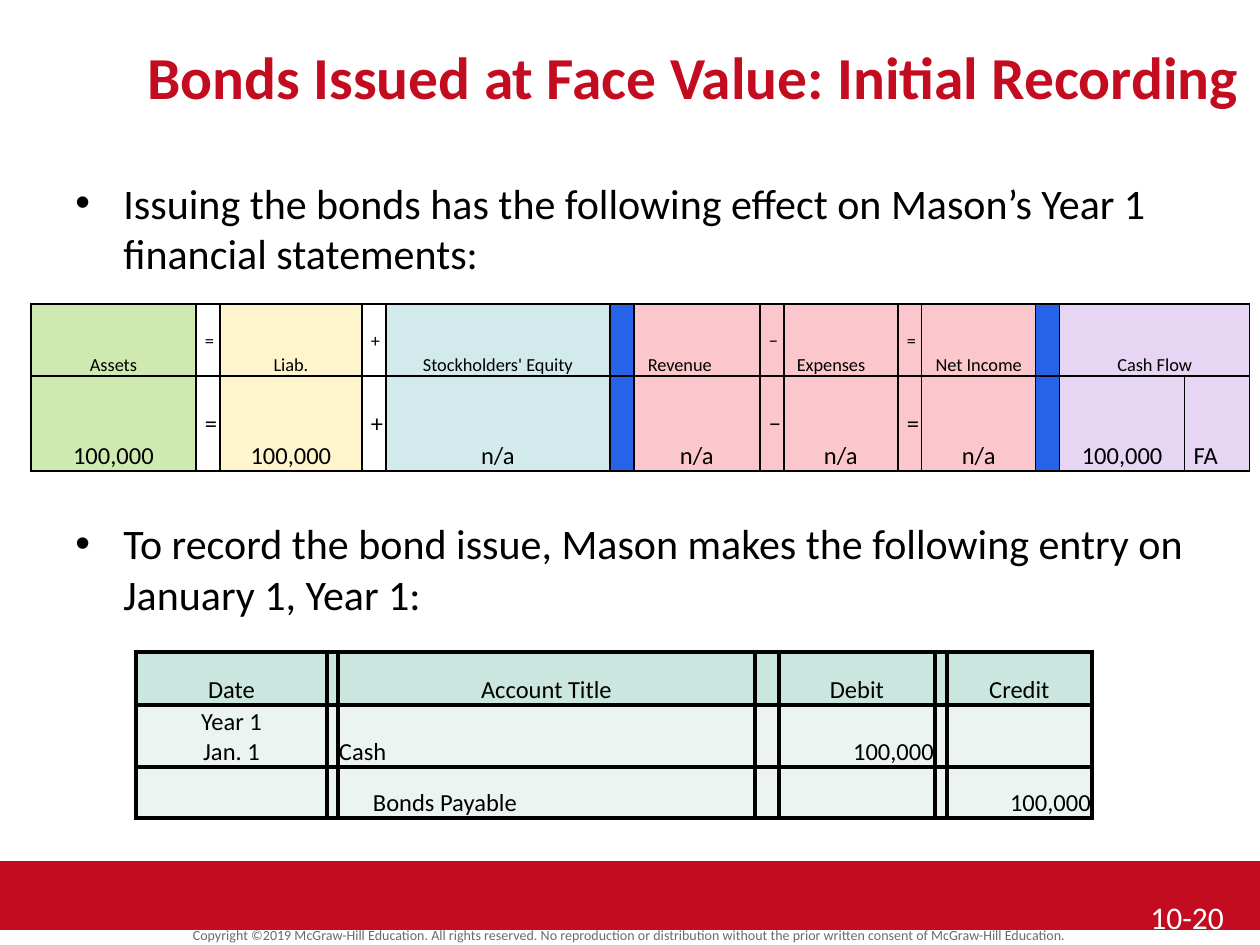
from lxml import etree
from pptx import Presentation, util as u
from pptx.dml.color import RGBColor
from pptx.enum import shapes, text
from pptx.oxml import ns

# Content
TITLE = "Bonds Issued at Face Value: Initial Recording"
BULLETS = [
    "Issuing the bonds has the following effect on Mason’s Year 1 financial statements:",
    "To record the bond issue, Mason makes the following entry on January 1, Year 1:",
]
COPYRIGHT = ("Copyright ©2019 McGraw-Hill Education. All rights reserved. No reproduction "
             "or distribution without the prior written consent of McGraw-Hill Education.")
PAGE = "10-20"

# Effects columns: width, fill name, header, amount
EFFECTS = [
    (165, "asset", "Assets", "100,000"),
    (24, None, "=", "="),
    (142, "liab", "Liab.", "100,000"),
    (24, None, "+", "+"),
    (224, "equity", "Stockholders' Equity", "n/a"),
    (24, "divider", "", ""),
    (126, "income", "Revenue", "n/a"),
    (24, "income", "−", "−"),
    (114, "income", "Expenses", "n/a"),
    (24, "income", "=", "="),
    (114, "income", "Net Income", "n/a"),
    (24, "divider", "", ""),
    (125, "cash", "Cash Flow", "100,000"),
    (65, "cash", "", "FA"),
]
EFFECT_ROWS = [72, 95]
LEFT_INSETS = {"Revenue": 14, "Expenses": 13, "FA": 9}  # left-aligned cells

JOURNAL_COLS = [191, 11, 417, 24, 156, 12, 145]
JOURNAL_ROWS = [53, 62, 51]
JOURNAL = [
    ["Date", "", "Account Title", "", "Debit", "", "Credit"],
    ["Year 1\nJan. 1", "", "Cash", "", "100,000", "", ""],
    ["", "", "Bonds Payable", "", "", "", "100,000"],
]

THEME = {
    "font": "Calibri",
    "red": "C30C20", "black": "000000", "white": "FFFFFF", "grey": "6A6A6A",
    "asset": "CEEAB0", "liab": "FFF5CC", "equity": "D3EAED", "divider": "2763E9",
    "income": "FBC6CC", "cash": "E6D5F3", "head": "CAE6DE", "entry": "ECF4F1",
    "title_pt": 34, "body_pt": 24, "page_pt": 18, "table_pt": 14,
    "label_pt": 10.5, "legal_pt": 8,
}
LEFT, CENTER, RIGHT = text.PP_ALIGN.LEFT, text.PP_ALIGN.CENTER, text.PP_ALIGN.RIGHT
MIDDLE, BOTTOM = text.MSO_ANCHOR.MIDDLE, text.MSO_ANCHOR.BOTTOM


def px(n):
    return u.Emu(round(n * 914400 / 126))


def color(name):
    return RGBColor.from_string(THEME[name])


def write(tf, content, size, ink="black", bold=False, align=LEFT,
          spacing=None, gap=0, hanging=0):
    """Fill a text frame, one paragraph a line; hanging adds bullets."""
    for i, line in enumerate(content.split("\n")):
        p = tf.paragraphs[0] if i == 0 else tf.add_paragraph()
        p.alignment = align
        if spacing:
            p.line_spacing = spacing
        if gap and i:
            p.space_before = u.Pt(gap)
        if hanging:
            pPr = p._p.get_or_add_pPr()
            pPr.set("marL", str(px(hanging)))
            pPr.set("indent", str(-px(hanging)))
            etree.SubElement(pPr, ns.qn("a:buFont"), typeface="Arial")
            etree.SubElement(pPr, ns.qn("a:buChar"), char="•")
        r = p.add_run()
        r.text = line
        r.font.name, r.font.size, r.font.bold = THEME["font"], u.Pt(THEME[size]), bold
        r.font.color.rgb = color(ink)


def add_text(s, box, content, size, anchor=text.MSO_ANCHOR.TOP, **fmt):
    tf = s.shapes.add_textbox(*map(px, box)).text_frame
    tf.word_wrap = True
    tf.vertical_anchor = anchor
    write(tf, content, size, **fmt)


def add_grid(s, left, top, cols, rows):
    tbl = s.shapes.add_table(len(rows), len(cols), px(left), px(top),
                             px(sum(cols)), px(sum(rows))).table
    tbl.first_row = tbl.horz_banding = False
    for col, w in zip(tbl.columns, cols):
        col.width = px(w)
    for row, h in zip(tbl.rows, rows):
        row.height = px(h)
    return tbl


def style_cell(cell, fill, border, inset, anchor=BOTTOM, left=None):
    cell.margin_left = px(inset if left is None else left)
    cell.margin_right = px(inset)
    cell.margin_top = cell.margin_bottom = 0
    cell.vertical_anchor = anchor
    if fill:
        cell.fill.solid()
        cell.fill.fore_color.rgb = color(fill)
    else:
        cell.fill.background()
    tcPr = cell._tc.get_or_add_tcPr()
    for i, side in enumerate("LRTB"):
        ln = etree.Element(ns.qn("a:ln" + side), w=str(u.Pt(border)))
        solid = etree.SubElement(ln, ns.qn("a:solidFill"))
        etree.SubElement(solid, ns.qn("a:srgbClr"), val=THEME["black"])
        tcPr.insert(i, ln)


def add_effects(s):
    tbl = add_grid(s, 31, 304, [e[0] for e in EFFECTS], EFFECT_ROWS)
    for c, (_, fill, *values) in enumerate(EFFECTS):
        for r, value in enumerate(values):
            cell = tbl.cell(r, c)
            anchor = MIDDLE if value in ("=", "+", "−") else BOTTOM
            style_cell(cell, fill, 1, 9, anchor, LEFT_INSETS.get(value))
            if value:
                write(cell.text_frame, value, "table_pt" if r else "label_pt",
                      align=LEFT if value in LEFT_INSETS else CENTER, spacing=1.07)
    last = len(EFFECTS) - 1
    tbl.cell(0, last - 1).merge(tbl.cell(0, last))


def add_journal(s):
    tbl = add_grid(s, 136, 652, JOURNAL_COLS, JOURNAL_ROWS)
    for r, row in enumerate(JOURNAL):
        for c, value in enumerate(row):
            cell = tbl.cell(r, c)
            indent = 35 if value == "Bonds Payable" else None
            style_cell(cell, "entry" if r else "head", 3, 1, left=indent)
            if value:
                align = CENTER if r == 0 or c == 0 else LEFT if c == 2 else RIGHT
                write(cell.text_frame, value, "table_pt", align=align)


def main():
    prs = Presentation()
    prs.slide_width, prs.slide_height = px(1260), px(945)
    s = prs.slides.add_slide(prs.slide_layouts[5])

    # Footer band, copyright line and page number
    band = s.shapes.add_shape(shapes.MSO_SHAPE.RECTANGLE, *map(px, (0, 861, 1260, 69)))
    band.shadow.inherit = False
    band.fill.solid()
    band.fill.fore_color.rgb = color("red")
    band.line.fill.background()
    add_text(s, (0, 925, 1260, 24), COPYRIGHT, "legal_pt", anchor=MIDDLE,
             ink="grey", align=CENTER, spacing=0.8)
    add_text(s, (1138, 892, 122, 53), PAGE, "page_pt", ink="white")

    # Title
    title = s.shapes.title
    title.left, title.top, title.width, title.height = map(px, (126, 34, 1134, 84))
    title.text_frame.auto_size = text.MSO_AUTO_SIZE.NONE
    title.text_frame.vertical_anchor = MIDDLE
    write(title.text_frame, TITLE, "title_pt", ink="red", bold=True, align=CENTER)

    # Bullets, spaced to leave room for the effects table
    add_text(s, (63, 171, 1134, 648), "\n".join(BULLETS), "body_pt", gap=137, hanging=48)

    add_effects(s)
    add_journal(s)
    prs.save("out.pptx")


if __name__ == "__main__":
    main()
